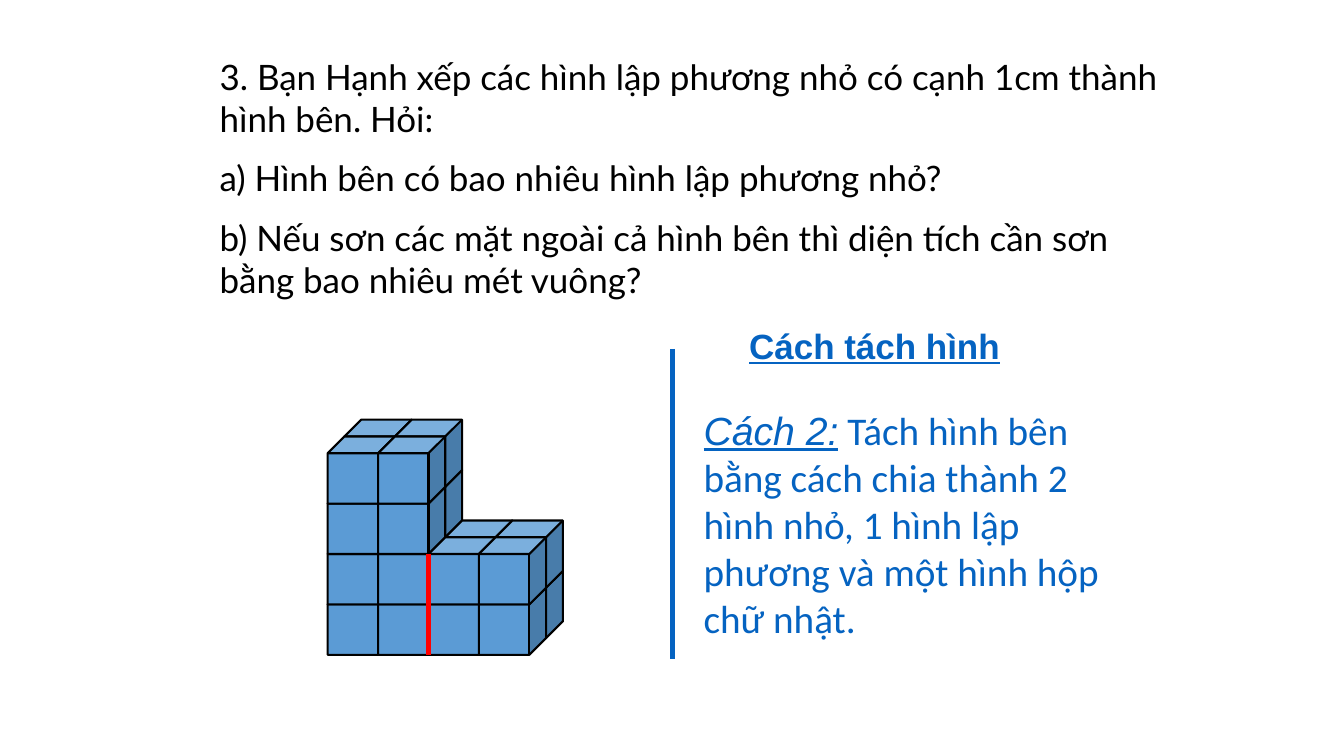
from dataclasses import dataclass
from itertools import product
from lxml.etree import SubElement
from pptx import Presentation
from pptx.dml.color import RGBColor
from pptx.enum.shapes import MSO_CONNECTOR, MSO_SHAPE
from pptx.enum.text import MSO_ANCHOR, MSO_AUTO_SIZE, PP_ALIGN
from pptx.oxml.ns import qn
from pptx.util import Inches, Pt


@dataclass(frozen=True)
class Theme:
    ink: RGBColor = RGBColor(0, 0, 0)
    blue: RGBColor = RGBColor(0x05, 0x63, 0xC1)
    cube: RGBColor = RGBColor(0x5B, 0x9B, 0xD5)
    red: RGBColor = RGBColor(0xFF, 0, 0)
    body: int = 25
    note: int = 28
    edge: float = 1.5
    rule: int = 3


class Board:
    """Draws the parts of the slide in one theme."""

    def __init__(self, slide, theme):
        self.slide = slide
        self.theme = theme

    def place(self, shape, box):
        shape.left, shape.top, shape.width, shape.height = map(Inches, box)

    def style(self, run, face, size, color, bold=False, italic=False, under=False):
        font = run.font
        font.name, font.size = face, Pt(size)
        font.color.rgb = color
        font.bold, font.italic, font.underline = bold, italic, under

    def setup(self, frame):
        frame.word_wrap = True
        frame.auto_size = MSO_AUTO_SIZE.SHAPE_TO_FIT_TEXT
        frame.vertical_anchor = MSO_ANCHOR.TOP

    def title(self, box, words):
        shape = self.slide.shapes.title
        self.place(shape, box)
        frame = shape.text_frame
        frame.text = words
        self.setup(frame)
        line = frame.paragraphs[0]
        line.alignment = PP_ALIGN.LEFT
        self.style(line.runs[0], "Arial", self.theme.body, self.theme.blue,
                   bold=True, under=True)

    def text(self, box, lines):
        frame = self.slide.shapes.add_textbox(*map(Inches, box)).text_frame
        frame.text = "\n".join(lines)
        self.setup(frame)
        for line in frame.paragraphs:
            line.space_before = Pt(self.theme.body / 2)
            self.style(line.runs[0], "Lato", self.theme.body, self.theme.ink)

    def note(self, box, lead, rest):
        frame = self.slide.shapes.add_textbox(*map(Inches, box)).text_frame
        self.setup(frame)
        line = frame.paragraphs[0]
        head, tail = line.add_run(), line.add_run()
        head.text, tail.text = lead, rest
        size, color = self.theme.note, self.theme.blue
        self.style(head, "Arial", size, color, italic=True, under=True)
        self.style(tail, "Calibri", size, color)

    def rule(self, x, top, end, color):
        line = self.slide.shapes.add_connector(
            MSO_CONNECTOR.STRAIGHT, Inches(x), Inches(top), Inches(x), Inches(end))
        line.line.color.rgb = color
        line.line.width = Pt(self.theme.rule)
        SubElement(line._element.spPr, qn("a:effectLst"))

    def block(self, left, top, side=0.5):
        group = self.slide.shapes.add_group_shape()
        depth = side / 3
        for back, row, col in product((1, 0), (1, 0), (0, 1)):
            box = (left + col * side + back * depth,
                   top + row * side - back * depth,
                   side + depth, side + depth)
            cube = group.shapes.add_shape(MSO_SHAPE.CUBE, *map(Inches, box))
            cube.adjustments[0] = 0.25
            cube.shadow.inherit = False
            cube.fill.solid()
            cube.fill.fore_color.rgb = self.theme.cube
            cube.line.color.rgb = self.theme.ink
            cube.line.width = Pt(self.theme.edge)


def main():
    deck = Presentation()
    deck.slide_width, deck.slide_height = Inches(13.33), Inches(7.5)
    theme = Theme()
    board = Board(deck.slides.add_slide(deck.slide_layouts[5]), theme)
    board.text((2.08, 0.5, 9.58, 2.6), [
        "3. Bạn Hạnh xếp các hình lập phương nhỏ có cạnh 1cm thành hình bên. Hỏi:",
        "a) Hình bên có bao nhiêu hình lập phương nhỏ?",
        "b) Nếu sơn các mặt ngoài cả hình bên thì diện tích cần sơn "
        "bằng bao nhiêu mét vuông?",
    ])
    board.title((7.33, 3.17, 3.17, 0.52), "Cách tách hình")
    board.rule(6.67, 3.46, 6.54, theme.blue)
    for left, top in ((3.25, 5.33), (3.25, 4.33), (4.25, 5.33)):
        board.block(left, top)
    board.rule(4.25, 5.5, 6.5, theme.red)
    board.note((6.88, 3.98, 4.55, 2.46), "Cách 2:",
               " Tách hình bên bằng cách chia thành 2 hình nhỏ, "
               "1 hình lập phương và một hình hộp chữ nhật.")
    deck.save("out.pptx")


if __name__ == "__main__":
    main()
